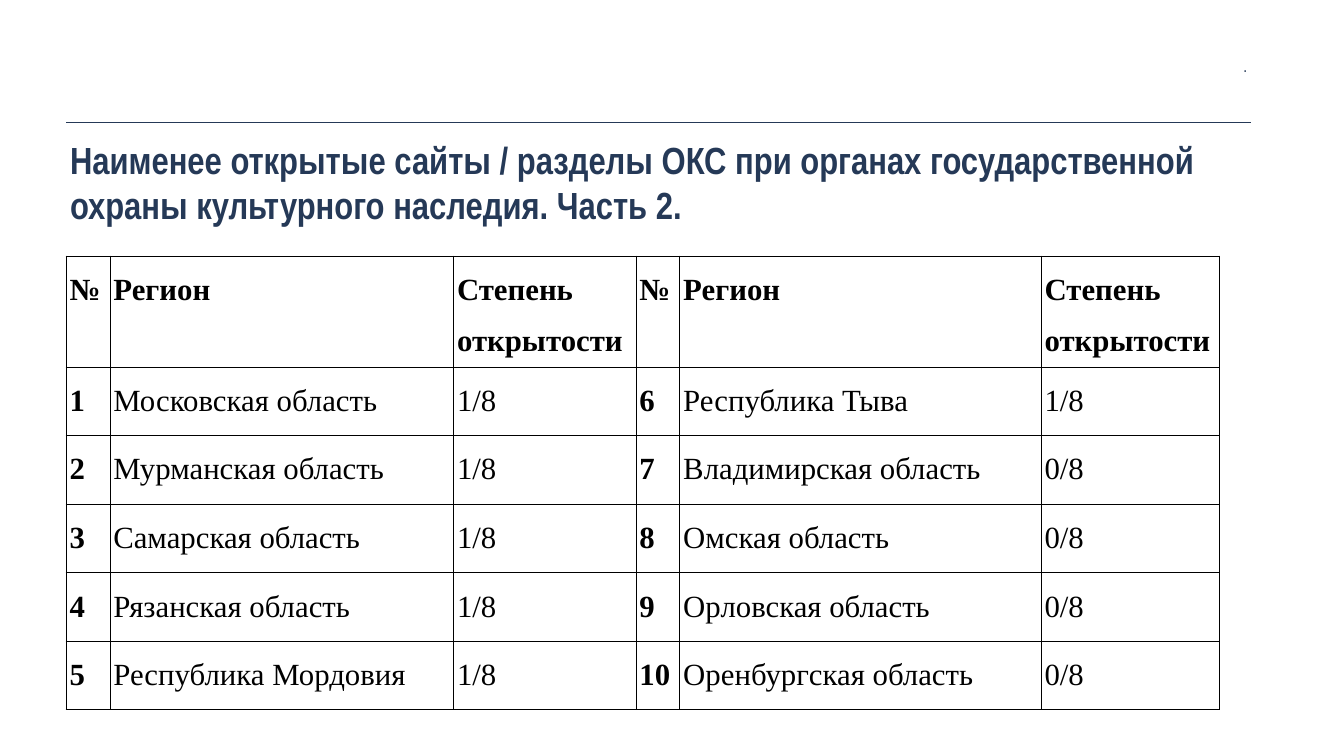
from lxml import etree
from pptx import Presentation
from pptx.dml.color import RGBColor
from pptx.enum.shapes import MSO_CONNECTOR
from pptx.enum.text import MSO_ANCHOR, MSO_AUTO_SIZE, PP_ALIGN
from pptx.oxml.ns import qn
from pptx.util import Emu, Pt

STRAIGHT = MSO_CONNECTOR.STRAIGHT
LEFT, RIGHT, JUSTIFY = PP_ALIGN.LEFT, PP_ALIGN.RIGHT, PP_ALIGN.JUSTIFY
TOP, MIDDLE, BOTTOM = MSO_ANCHOR.TOP, MSO_ANCHOR.MIDDLE, MSO_ANCHOR.BOTTOM
NO_FIT, GROW = MSO_AUTO_SIZE.NONE, MSO_AUTO_SIZE.SHAPE_TO_FIT_TEXT

EMU_PER_PX = 9144
NAVY, BLACK = "253957", "000000"
MARGIN = 131

HEADINGS = ["№", "Регион", "Степень открытости"]
RATINGS = [
    ("Московская область", "1/8"),
    ("Мурманская область", "1/8"),
    ("Самарская область", "1/8"),
    ("Рязанская область", "1/8"),
    ("Республика Мордовия", "1/8"),
    ("Республика Тыва", "1/8"),
    ("Владимирская область", "0/8"),
    ("Омская область", "0/8"),
    ("Орловская область", "0/8"),
    ("Оренбургская область", "0/8"),
]
COLUMN_WIDTHS = [87, 682, 362, 87, 717, 354]
ROW_HEIGHT = 136


def px(length):
    return Emu(length * EMU_PER_PX)


def color(value):
    return RGBColor.from_string(value)


def apply(target, values):
    for name, value in values.items():
        setattr(target, name, value)


class SlideBuilder:
    """Adds styled elements to the current slide."""

    title_font = "Arial Narrow"
    table_font = "Times New Roman"

    def __init__(self, slide):
        self.slide = slide

    def fill_paragraph(self, paragraph, text, font, size, text_color, bold, layout):
        run = paragraph.add_run()
        run.text = text
        apply(run.font, {"name": font, "size": Pt(size), "bold": bold})
        run.font.color.rgb = color(text_color)
        apply(paragraph, layout)

    def line(self, left, right, y):
        connector = self.slide.shapes.add_connector(STRAIGHT, px(left), px(y), px(right), px(y))
        connector.line.color.rgb = color(NAVY)
        connector.line.width = Pt(1)
        etree.SubElement(connector.element.spPr, qn("a:effectLst"))

    def text(self, box, text, size, bold, anchor, fit, layout):
        shape = self.slide.shapes.add_textbox(*map(px, box))
        inset = px(8)
        apply(shape.text_frame, {
            "word_wrap": True, "vertical_anchor": anchor, "auto_size": fit,
            "margin_left": inset, "margin_right": inset,
            "margin_top": inset, "margin_bottom": inset,
        })
        paragraph = shape.text_frame.paragraphs[0]
        self.fill_paragraph(paragraph, text, self.title_font, size, NAVY, bold, layout)

    def border(self, cell):
        properties = cell._tc.get_or_add_tcPr()
        for side in ("a:lnL", "a:lnR", "a:lnT", "a:lnB"):
            edge = etree.SubElement(properties, qn(side), w=str(Pt(1)))
            fill = etree.SubElement(edge, qn("a:solidFill"))
            etree.SubElement(fill, qn("a:srgbClr"), val=BLACK)

    def cell(self, cell, text, bold):
        apply(cell, {
            "margin_left": px(7), "margin_right": px(7),
            "margin_top": 0, "margin_bottom": 0, "vertical_anchor": TOP,
        })
        self.border(cell)
        cell.fill.background()
        layout = {"alignment": JUSTIFY, "line_spacing": 1.5, "space_after": Pt(8)}
        paragraph = cell.text_frame.paragraphs[0]
        self.fill_paragraph(paragraph, text, self.table_font, 44, BLACK, bold, layout)

    def table(self, left, top, widths, row_height, rows):
        box = (left, top, sum(widths), row_height * len(rows))
        table = self.slide.shapes.add_table(len(rows), len(widths), *map(px, box)).table
        table.horz_banding = False
        for column, width in zip(table.columns, widths):
            column.width = px(width)
        for row_index, row in enumerate(rows):
            for column_index, text in enumerate(row):
                bold = row_index == 0 or column_index % len(HEADINGS) == 0
                self.cell(table.cell(row_index, column_index), text, bold)


def rating_rows():
    entries = [[str(number), *rating] for number, rating in enumerate(RATINGS, 1)]
    half = len(entries) // 2
    pairs = zip(entries[:half], entries[half:])
    return [HEADINGS * 2] + [first + second for first, second in pairs]


def main():
    presentation = Presentation()
    apply(presentation, {"slide_width": px(2667), "slide_height": px(1500)})
    builder = SlideBuilder(presentation.slides.add_slide(presentation.slide_layouts[6]))
    builder.line(MARGIN, 2483, 242)
    builder.text(
        (MARGIN, 262, 2478, 197),
        "Наименее открытые сайты / разделы ОКС при органах государственной "
        "охраны культурного наследия. Часть 2.",
        54, True, BOTTOM, NO_FIT, {"alignment": LEFT, "space_after": Pt(24)},
    )
    builder.text((1240, 103, 1243, 56), ".", 24, False, MIDDLE, GROW, {"alignment": RIGHT})
    builder.table(MARGIN, 508, COLUMN_WIDTHS, ROW_HEIGHT, rating_rows())
    presentation.save("out.pptx")


if __name__ == "__main__":
    main()
